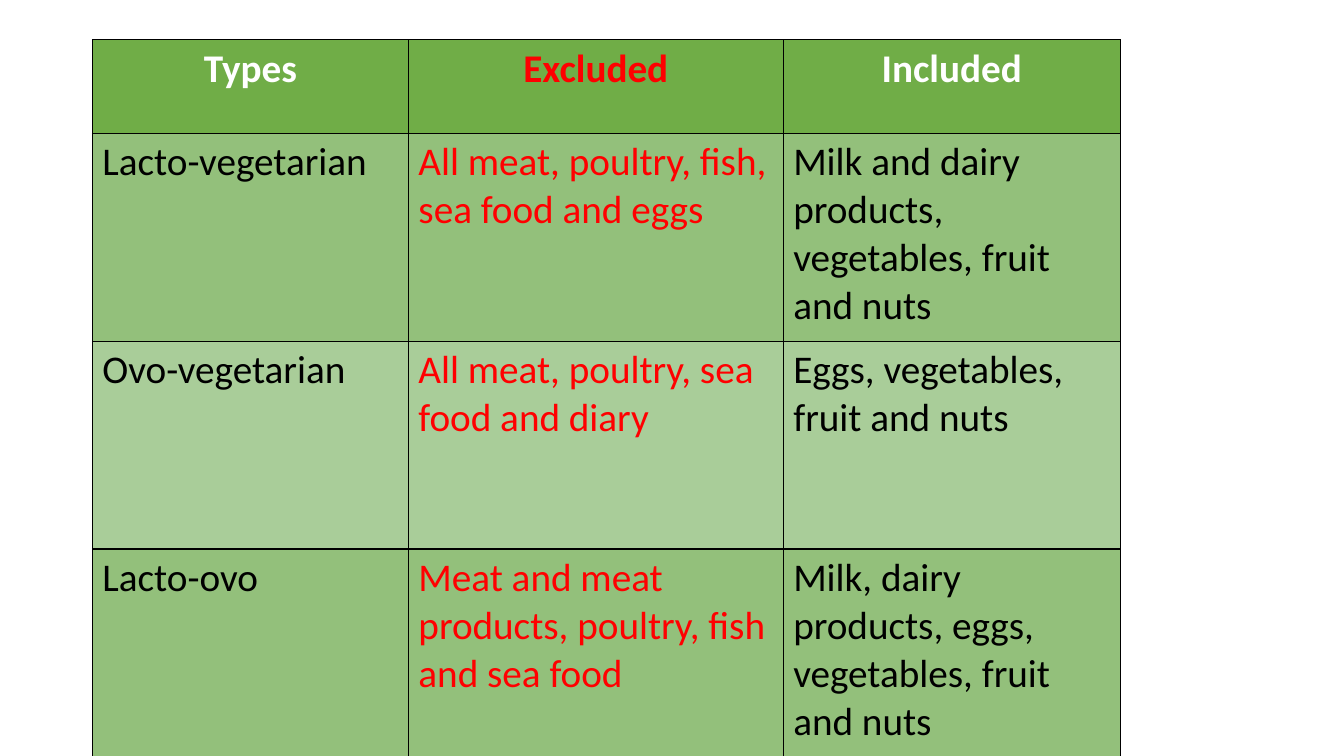
from lxml import etree
from pptx import Presentation
from pptx.dml.color import RGBColor
from pptx.enum.text import PP_ALIGN
from pptx.oxml.ns import qn
from pptx.util import Pt

PX = 9525
CENTER, LEFT = PP_ALIGN.CENTER, PP_ALIGN.LEFT
WHITE = RGBColor(0xFF, 0xFF, 0xFF)
BLACK = RGBColor(0x00, 0x00, 0x00)
RED = RGBColor(0xFF, 0x00, 0x00)
GREEN = RGBColor(0x70, 0xAD, 0x47)
MID_GREEN = RGBColor(0x93, 0xC0, 0x7B)
PALE_GREEN = RGBColor(0xA9, 0xCD, 0x99)

COLUMN_WIDTHS = [301, 357, 321]
ROW_HEIGHTS = [89, 198, 198, 198]
ROW_FILLS = [GREEN, MID_GREEN, PALE_GREEN, MID_GREEN]
DIETS = [
    ["Types", "Excluded", "Included"],
    ["Lacto-vegetarian", "All meat, poultry, fish, sea food and eggs",
     "Milk and dairy products, vegetables, fruit and nuts"],
    ["Ovo-vegetarian", "All meat, poultry, sea food and diary",
     "Eggs, vegetables, fruit and nuts"],
    ["Lacto-ovo", "Meat and meat products, poultry, fish and sea food",
     "Milk, dairy products, eggs, vegetables, fruit and nuts"],
]


def px(n):
    """Turn whole pixels into EMU."""
    return n * PX


def add_text(tf, text, size=28, color=BLACK, bold=False, align=LEFT):
    """Write one formatted paragraph into a text frame."""
    p = tf.paragraphs[0]
    p.alignment = align
    r = p.add_run()
    r.text = text
    r.font.name = "Calibri"
    r.font.size = Pt(size)
    r.font.bold = bold
    r.font.color.rgb = color


def set_borders(cell, color=BLACK, width=1):
    """Draw a solid line on all four sides of a cell."""
    tc_pr = cell._tc.get_or_add_tcPr()
    for side in ("a:lnL", "a:lnR", "a:lnT", "a:lnB"):
        ln = etree.SubElement(tc_pr, qn(side), w=str(Pt(width)))
        fill = etree.SubElement(ln, qn("a:solidFill"))
        etree.SubElement(fill, qn("a:srgbClr"), val=str(color))


def add_diet_table(slide, left, top):
    """Add the table of vegetarian diets."""
    table = slide.shapes.add_table(
        len(DIETS), len(COLUMN_WIDTHS), px(left), px(top),
        px(sum(COLUMN_WIDTHS)), px(sum(ROW_HEIGHTS))).table
    for column, width in zip(table.columns, COLUMN_WIDTHS):
        column.width = px(width)
    for i, (row, height) in enumerate(zip(table.rows, ROW_HEIGHTS)):
        row.height = px(height)
        header = i == 0
        base = WHITE if header else BLACK
        for j, cell in enumerate(row.cells):
            set_borders(cell)
            cell.fill.solid()
            cell.fill.fore_color.rgb = ROW_FILLS[i]
            add_text(cell.text_frame, DIETS[i][j], bold=header,
                     color=RED if j == 1 else base,
                     align=CENTER if header else LEFT)


def main():
    """Build the slide and save it."""
    prs = Presentation()
    prs.slide_width, prs.slide_height = px(1280), px(720)
    slide = prs.slides.add_slide(prs.slide_layouts[6])
    add_diet_table(slide, 88, 38)
    prs.save("out.pptx")


if __name__ == "__main__":
    main()
